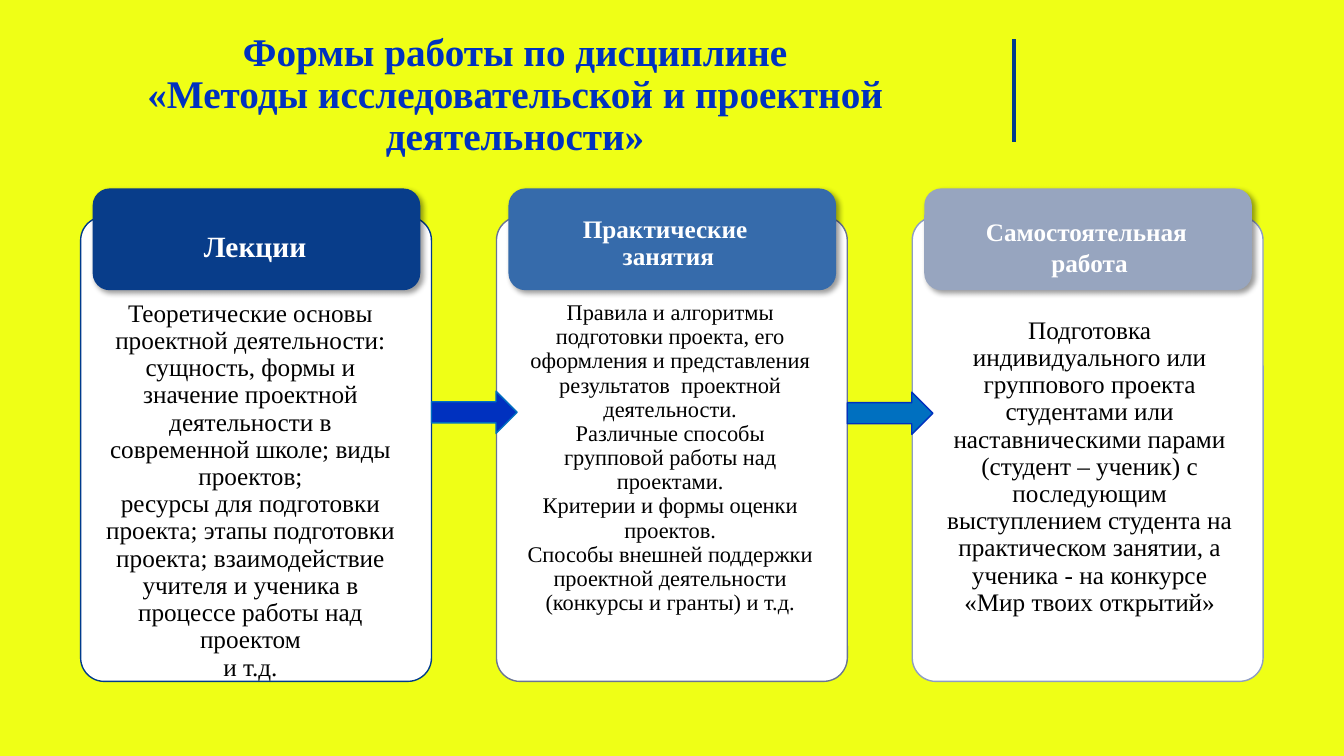
from lxml import etree
from pptx import Presentation
from pptx.dml.color import RGBColor
from pptx.enum.shapes import MSO_CONNECTOR, MSO_SHAPE
from pptx.enum.text import MSO_ANCHOR, PP_ALIGN
from pptx.oxml.ns import qn
from pptx.util import Pt

ROUNDED = MSO_SHAPE.ROUNDED_RECTANGLE
ARROW = MSO_SHAPE.RIGHT_ARROW
STRAIGHT = MSO_CONNECTOR.STRAIGHT
CENTER = PP_ALIGN.CENTER
TOP = MSO_ANCHOR.TOP
MIDDLE = MSO_ANCHOR.MIDDLE

THEME = {
    "font": "Times New Roman",
    "background": "EFFF16",
    "title": "0031BF",
    "rule": "003B8B",
    "white": "FFFFFF",
    "text": "000000",
    "shadow": "000000",
    "tabs": ["083D8A", "366BAB", "97A5BF"],
    "outlines": ["003B8B", "6A7592", "8E9DC3"],
    "arrows": [("0031BF", "0070C0"), ("0070C0", "0031BF")],
    "title_size": 28,
    "heading_sizes": [21, 18, 18],
    "body_sizes": [18, 16, 18],
}

CARD_LEFT, CARD_WIDTH, PITCH = 57.6, 250.6, 297

COLUMNS = [
    {
        "heading": ["Лекции"],
        "heading_box": (88.6, 162, 187.2, 29.5),
        "heading_spacing": 0.9,
        "body": [
            "Теоретические основы проектной деятельности:",
            "сущность, формы и значение проектной деятельности в современной школе; виды проектов;",
            "ресурсы для подготовки проекта; этапы подготовки проекта; "
            "взаимодействие учителя и ученика в процессе работы над проектом",
            "и т.д.",
        ],
        "body_box": (66.2, 211, 225.4, 268.6),
    },
    {
        "heading": ["Практические ", "занятия"],
        "heading_box": (373.7, 151.2, 207.4, 40.3),
        "heading_spacing": 0.9,
        "body": [
            "Правила и алгоритмы подготовки проекта, его оформления и представления "
            "результатов  проектной деятельности.",
            "Различные способы групповой работы над проектами.",
            "Критерии и формы оценки проектов.",
            "Способы внешней поддержки проектной деятельности (конкурсы и гранты) и т.д.",
        ],
        "body_box": (368.6, 211.7, 220.3, 268.6),
    },
    {
        "heading": ["Самостоятельная ", "работа"],
        "heading_box": (668.9, 151.2, 218.9, 40.3),
        "heading_spacing": 1.0,
        "body": [
            "Подготовка индивидуального или группового проекта студентами или "
            "наставническими парами (студент – ученик) с последующим выступлением "
            "студента на практическом занятии, а ученика - на конкурсе «Мир твоих открытий»",
        ],
        "body_box": (668.9, 223.2, 218.9, 247),
    },
]


def add_shape(kind, box, fill, line=None):
    sp = s.shapes.add_shape(kind, *map(Pt, box))
    sp.shadow.inherit = False
    sp.fill.solid()
    sp.fill.fore_color.rgb = RGBColor.from_string(fill)
    if line:
        sp.line.color.rgb = RGBColor.from_string(line)
        sp.line.width = Pt(1)
    else:
        sp.line.fill.background()
    return sp


def add_text(box, paragraphs, size, color, bold=False, spacing=0.9, anchor=TOP):
    tf = s.shapes.add_textbox(*map(Pt, box)).text_frame
    tf.word_wrap = True
    tf.vertical_anchor = anchor
    for i, paragraph in enumerate(paragraphs):
        p = tf.add_paragraph() if i else tf.paragraphs[0]
        p.alignment = CENTER
        p.line_spacing = spacing
        for j, text in enumerate(paragraph.split("\n")):
            if j:
                p.add_line_break()
            r = p.add_run()
            r.text = text
            r.font.name = THEME["font"]
            r.font.size = Pt(size)
            r.font.bold = bold
            r.font.color.rgb = RGBColor.from_string(color)


prs = Presentation()
prs.slide_width, prs.slide_height = Pt(960), Pt(540)
s = prs.slides.add_slide(prs.slide_layouts[6])
s.background.fill.solid()
s.background.fill.fore_color.rgb = RGBColor.from_string(THEME["background"])

add_text((26.6, 25.9, 682.6, 85),
         ["Формы работы по дисциплине\n«Методы исследовательской и проектной деятельности»"],
         THEME["title_size"], THEME["title"], bold=True, anchor=MIDDLE)

rule = s.shapes.add_connector(STRAIGHT, Pt(724.3), Pt(28.1), Pt(724.3), Pt(101.5))
rule.line.color.rgb = RGBColor.from_string(THEME["rule"])
rule.line.width = Pt(3)
etree.SubElement(rule._element.spPr, qn("a:effectLst"))

for i, column in enumerate(COLUMNS):
    left = CARD_LEFT + i * PITCH
    card = add_shape(ROUNDED, (left, 154.8, CARD_WIDTH, 331.9),
                     THEME["white"], THEME["outlines"][i])
    card.adjustments[0] = 0.067

    tab = add_shape(ROUNDED, (left + 8.6, 134.6, 234, 72.7), THEME["tabs"][i])
    effects = tab._element.spPr.find(qn("a:effectLst"))
    shadow = etree.SubElement(effects, qn("a:outerShdw"), blurRad=str(Pt(4)),
                              dist=str(Pt(3)), dir="2700000", algn="tl", rotWithShape="0")
    shade = etree.SubElement(shadow, qn("a:srgbClr"), val=THEME["shadow"])
    etree.SubElement(shade, qn("a:alpha"), val="40000")

    add_text(column["heading_box"], column["heading"], THEME["heading_sizes"][i],
             THEME["white"], bold=True, spacing=column["heading_spacing"])
    add_text(column["body_box"], column["body"], THEME["body_sizes"][i], THEME["text"])

for i, (fill, line) in enumerate(THEME["arrows"]):
    left = CARD_LEFT + CARD_WIDTH + i * PITCH
    add_shape(ARROW, (left, 279.4 + i * 0.7, 61.2, 30.2), fill, line)

prs.save("out.pptx")
